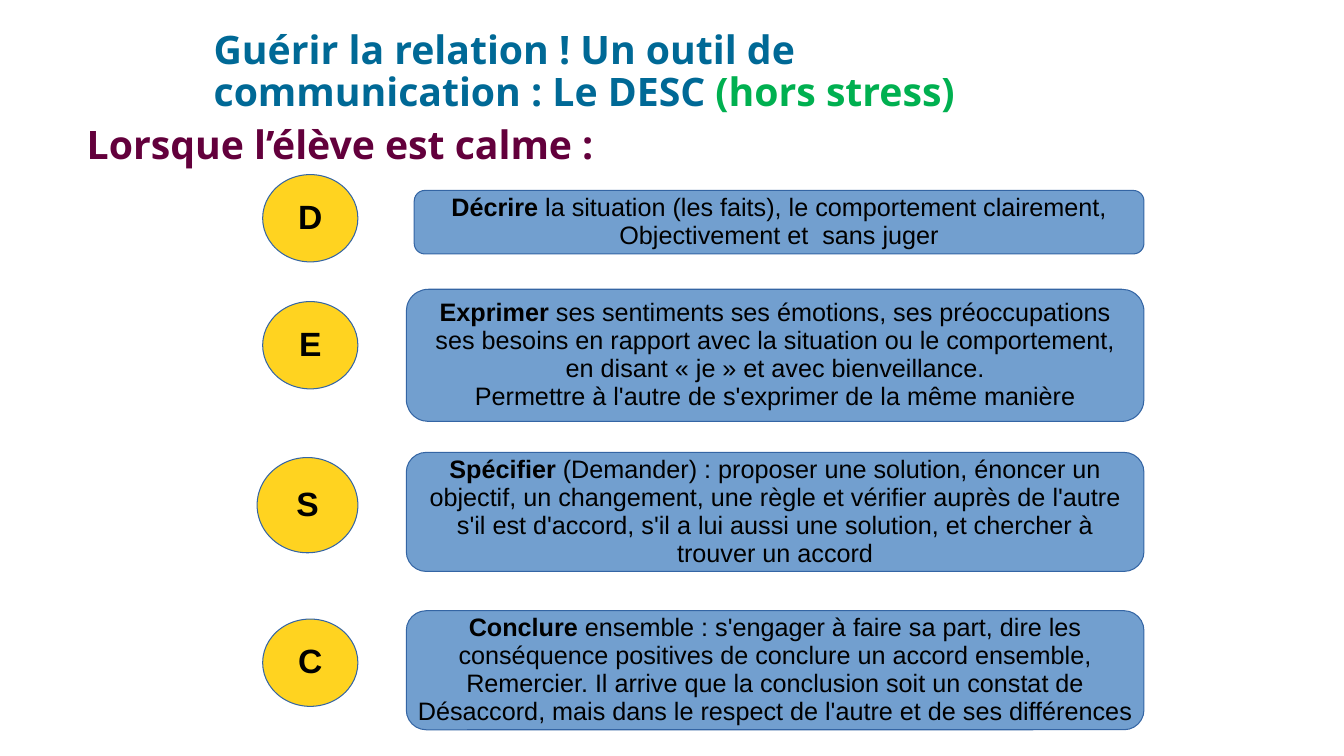
from dataclasses import dataclass

from lxml.etree import SubElement
from pptx import Presentation
from pptx.dml.color import RGBColor
from pptx.enum.shapes import MSO_SHAPE as Shape
from pptx.enum.text import MSO_ANCHOR as Anchor, PP_ALIGN as Align
from pptx.oxml.ns import qn
from pptx.util import Cm, Pt


@dataclass(frozen=True)
class Theme:
    title: str = "006996"
    accent: str = "00B050"
    heading: str = "63003C"
    text: str = "000000"
    card: str = "729FCF"
    badge: str = "FFD320"
    outline: str = "3465A4"
    heading_font: str = "Open Sans"
    body_font: str = "Arial"
    heading_size: int = 28
    badge_size: int = 24
    card_size: int = 18


@dataclass(frozen=True)
class Box:
    """Position and size in centimetres."""
    left: float
    top: float
    width: float
    height: float


@dataclass(frozen=True)
class Step:
    keyword: str
    lines: tuple[str, ...]
    badge_top: float
    card_top: float
    card_height: float
    card_width: float = 18.59
    badge_width: float = 2.4
    badge_height: float = 2.2


THEME = Theme()
BADGE_RIGHT = 9.02
CARD_RIGHT = 28.83

STEPS = (
    Step("Décrire", (
        " la situation (les faits), le comportement clairement,",
        "Objectivement et  sans juger",
    ), badge_top=4.4, card_top=4.8, card_height=1.6, card_width=18.39),
    Step("Exprimer", (
        " ses sentiments ses émotions, ses préoccupations",
        "ses besoins en rapport avec la situation ou le comportement,",
        "en disant « je » et avec bienveillance.",
        "Permettre à l'autre de s'exprimer de la même manière",
    ), badge_top=7.6, card_top=7.29, card_height=3.33),
    Step("Spécifier", (
        " (Demander) : proposer une solution, énoncer un",
        "objectif, un changement, une règle et vérifier auprès de l'autre",
        "s'il est d'accord, s'il a lui aussi une solution, et chercher à",
        "trouver un accord",
    ), badge_top=11.53, card_top=11.4, card_height=3,
        badge_width=2.54, badge_height=2.4),
    Step("Conclure", (
        " ensemble : s'engager à faire sa part, dire les",
        "conséquence positives de conclure un accord ensemble,",
        "Remercier. Il arrive que la conclusion soit un constat de",
        "Désaccord, mais dans le respect de l'autre et de ses différences",
    ), badge_top=15.6, card_top=15.39, card_height=3),
)


def add_run(p, text: str, *, size: int, font: str, color: str,
            bold: bool = False) -> None:
    r = p.add_run()
    r.text = text
    r.font.size = Pt(size)
    r.font.name = font
    r.font.bold = bold
    r.font.color.rgb = RGBColor.from_string(color)


def place(sp, box: Box) -> None:
    sp.left, sp.top = Cm(box.left), Cm(box.top)
    sp.width, sp.height = Cm(box.width), Cm(box.height)


def add_heading(sp, box: Box, anchor: Anchor,
                runs: tuple[tuple[str, str], ...]) -> None:
    """Move a placeholder and fill it with (text, colour) runs, unbulleted."""
    place(sp, box)
    tf = sp.text_frame
    tf.vertical_anchor = anchor
    p = tf.paragraphs[0]
    p.alignment = Align.LEFT
    p.line_spacing = 0.9
    p.space_before = Pt(0)
    pPr = p._p.get_or_add_pPr()
    pPr.set("marL", "0")
    pPr.set("indent", "0")
    SubElement(pPr, qn("a:buNone"))
    for text, color in runs:
        add_run(p, text, size=THEME.heading_size, font=THEME.heading_font,
                color=color, bold=True)


def add_panel(s, kind: Shape, box: Box, fill: str):
    """Add an outlined shape and return its text frame."""
    sp = s.shapes.add_shape(kind, Cm(box.left), Cm(box.top),
                            Cm(box.width), Cm(box.height))
    sp.shadow.inherit = False
    sp.fill.solid()
    sp.fill.fore_color.rgb = RGBColor.from_string(fill)
    sp.line.color.rgb = RGBColor.from_string(THEME.outline)
    sp.line.width = Pt(0.75)
    tf = sp.text_frame
    tf.word_wrap = False
    tf.vertical_anchor = Anchor.MIDDLE
    return tf


def add_line(tf, index: int):
    """Return a centred paragraph, reusing the first one of the frame."""
    p = tf.add_paragraph() if index else tf.paragraphs[0]
    p.alignment = Align.CENTER
    p.line_spacing = 0.93
    return p


def add_step(s, step: Step) -> None:
    badge = Box(BADGE_RIGHT - step.badge_width, step.badge_top,
                step.badge_width, step.badge_height)
    tf = add_panel(s, Shape.OVAL, badge, THEME.badge)
    add_run(add_line(tf, 0), step.keyword[0], size=THEME.badge_size,
            font=THEME.body_font, color=THEME.text, bold=True)

    card = Box(CARD_RIGHT - step.card_width, step.card_top,
               step.card_width, step.card_height)
    tf = add_panel(s, Shape.ROUNDED_RECTANGLE, card, THEME.card)
    style = dict(size=THEME.card_size, font=THEME.body_font, color=THEME.text)
    for i, line in enumerate(step.lines):
        p = add_line(tf, i)
        if i == 0:
            add_run(p, step.keyword, bold=True, **style)
        add_run(p, line, **style)


def main() -> None:
    prs = Presentation()
    prs.slide_width, prs.slide_height = Cm(33.87), Cm(19.05)
    s = prs.slides.add_slide(prs.slide_layouts[1])
    add_heading(s.shapes.title, Box(5.13, 0.28, 22.81, 3.12), Anchor.MIDDLE, (
        ("Guérir la relation ! Un outil de communication : Le DESC ",
         THEME.title),
        ("(hors stress)", THEME.accent),
    ))
    add_heading(s.placeholders[1], Box(1.93, 3.05, 25, 14), Anchor.TOP, (
        ("Lorsque l’élève est calme :", THEME.heading),
    ))
    for step in STEPS:
        add_step(s, step)
    prs.save("out.pptx")


if __name__ == "__main__":
    main()
